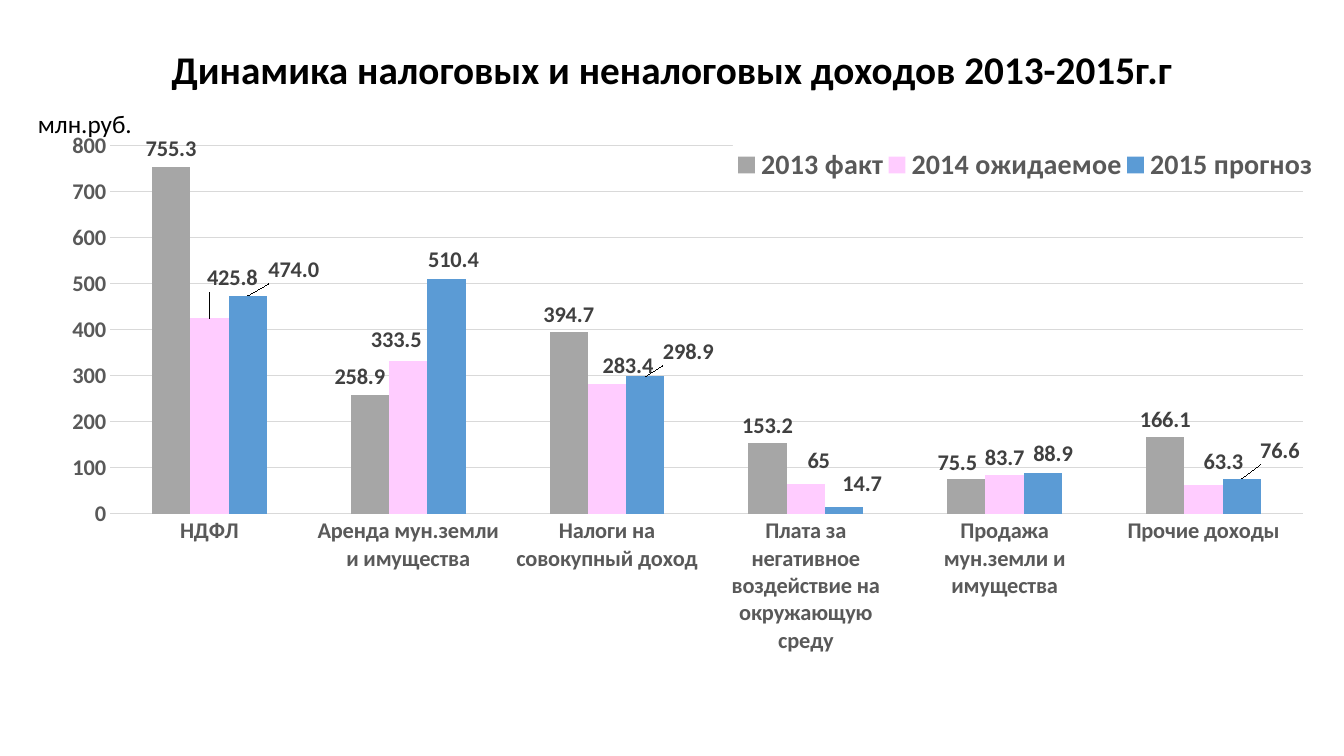
"""Build the slide on tax and non-tax revenue for 2013-2015."""
from dataclasses import dataclass, field

from lxml.etree import SubElement
from pptx import Presentation
from pptx.chart.data import CategoryChartData
from pptx.dml.color import RGBColor
from pptx.enum.chart import XL_CHART_TYPE as ChartType
from pptx.enum.chart import XL_LABEL_POSITION as LabelPos
from pptx.enum.chart import XL_LEGEND_POSITION as LegendPos
from pptx.enum.chart import XL_TICK_MARK as Tick
from pptx.enum.text import MSO_ANCHOR as Anchor
from pptx.enum.text import MSO_AUTO_SIZE as AutoSize
from pptx.enum.text import PP_ALIGN as Align
from pptx.oxml import parse_xml
from pptx.oxml.ns import nsdecls, qn
from pptx.util import Emu, Pt


@dataclass(frozen=True)
class Theme:
    font: str = "Calibri"
    text: str = "000000"
    axis: str = "595959"
    label: str = "404040"
    grid: str = "D9D9D9"
    paper: str = "FFFFFF"
    title_pt: int = 28
    legend_pt: int = 20
    unit_pt: int = 18
    chart_pt: int = 16
    line_pt: float = 0.75


@dataclass(frozen=True)
class Box:
    x: int
    y: int
    w: int
    h: int

    def emu(self) -> tuple:
        return tuple(px(v) for v in (self.x, self.y, self.w, self.h))


@dataclass(frozen=True)
class Series:
    name: str
    values: tuple
    color: str
    number_format: str = "General"
    label_shifts: dict = field(default_factory=dict)


THEME = Theme()
EMU_PER_PX = 12192000 / 1344
SLIDE_W, SLIDE_H = 1344, 756
TITLE = Box(92, 31, 1159, 81)
UNIT = Box(28, 103, 127, 40)
CHART = Box(46, 132, 1272, 593)
PLOT = Box(64, 14, 1193, 368)
LEGEND = Box(687, 12, 585, 42)

CATEGORIES = (
    "НДФЛ",
    "Аренда мун.земли и имущества",
    "Налоги на совокупный доход",
    "Плата за негативное воздействие на окружающую среду",
    "Продажа мун.земли и имущества",
    "Прочие доходы",
)
SERIES = (
    Series("2013 факт", (755.3, 258.9, 394.7, 153.2, 75.5, 166.1), "A6A6A6",
           label_shifts={1: (-10, 0), 4: (-9, 2)}),
    Series("2014 ожидаемое", (425.8, 333.5, 283.4, 65, 83.7, 63.3), "FFCCFF",
           label_shifts={0: (23, -22), 1: (-12, -3), 2: (21, 0),
                         3: (13, -5), 5: (20, -5)}),
    Series("2015 прогноз", (474, 510.4, 298.9, 14.7, 88.9, 76.6), "5B9BD5", "#,##0.0",
           label_shifts={0: (46, -8), 1: (7, -1), 2: (43, -7),
                         3: (18, -5), 4: (10, -1), 5: (38, -10)}),
)


def px(n: int) -> Emu:
    return Emu(round(n * EMU_PER_PX))


def rgb(color: str) -> RGBColor:
    return RGBColor.from_string(color)


def set_font(font, size: float, color: str, bold: bool) -> None:
    font.name, font.size, font.bold = THEME.font, Pt(size), bold
    font.color.rgb = rgb(color)


def set_line(line) -> None:
    line.color.rgb = rgb(THEME.grid)
    line.width = Pt(THEME.line_pt)


def place(parent, index: int, **parts) -> None:
    for old in parent.findall(qn("c:layout")):
        parent.remove(old)
    layout = parse_xml(f"<c:layout {nsdecls('c')}><c:manualLayout/></c:layout>")
    for name, value in parts.items():
        SubElement(layout[0], qn(f"c:{name}")).set("val", str(value))
    parent.insert(index, layout)


def edges(box: Box) -> dict:
    return dict(xMode="edge", yMode="edge",
                x=round(box.x / CHART.w, 4), y=round(box.y / CHART.h, 4),
                w=round(box.w / CHART.w, 4), h=round(box.h / CHART.h, 4))


def style_series(ser, data: Series) -> None:
    ser.format.fill.solid()
    ser.format.fill.fore_color.rgb = rgb(data.color)
    ser.invert_if_negative = False
    labels = ser.data_labels
    labels.show_value = True
    labels.position = LabelPos.OUTSIDE_END
    labels.number_format = data.number_format
    labels.number_format_is_linked = False
    set_font(labels.font, THEME.chart_pt, THEME.label, True)
    for i, (dx, dy) in data.label_shifts.items():
        label = ser.points[i].data_label
        label.position = LabelPos.OUTSIDE_END
        set_font(label.font, THEME.chart_pt, THEME.label, True)
    for node in labels._element.findall(qn("c:dLbl")):
        dx, dy = data.label_shifts[int(node.find(qn("c:idx")).get("val"))]
        place(node, 1, x=round(dx / CHART.w, 4), y=round(dy / CHART.h, 4))
        node.insert(2, parse_xml(
            f'<c:numFmt {nsdecls("c")} formatCode="{data.number_format}" sourceLinked="0"/>'))


def style_axes(chart) -> None:
    for axis in (chart.category_axis, chart.value_axis):
        axis.major_tick_mark = axis.minor_tick_mark = Tick.NONE
        set_font(axis.tick_labels.font, THEME.chart_pt, THEME.axis, True)
    set_line(chart.category_axis.format.line)
    values = chart.value_axis
    values.minimum_scale, values.maximum_scale, values.major_unit = 0, 800, 100
    values.format.line.fill.background()
    set_line(values.major_gridlines.format.line)


def style_legend(chart) -> None:
    chart.has_legend = True
    legend = chart.legend
    legend.position = LegendPos.BOTTOM
    legend.include_in_layout = False
    set_font(legend.font, THEME.legend_pt, THEME.axis, True)
    node = legend._element
    place(node, 1, **edges(LEGEND))
    node.find(qn("c:overlay")).addnext(parse_xml(
        f'<c:spPr {nsdecls("c", "a")}><a:solidFill><a:srgbClr val="{THEME.paper}"/>'
        "</a:solidFill></c:spPr>"))


def add_revenue_chart(s) -> None:
    data = CategoryChartData()
    data.categories = CATEGORIES
    for item in SERIES:
        data.add_series(item.name, item.values, item.number_format)
    chart = s.shapes.add_chart(ChartType.COLUMN_CLUSTERED, *CHART.emu(), data).chart
    chart.has_title = False
    set_font(chart.font, THEME.chart_pt, THEME.text, True)
    plot = chart.plots[0]
    plot.gap_width, plot.overlap, plot.vary_by_categories = 219, 0, False
    for ser, item in zip(plot.series, SERIES):
        style_series(ser, item)
    style_axes(chart)
    style_legend(chart)
    area = chart._chartSpace.find(f".//{qn('c:plotArea')}")
    place(area, 0, layoutTarget="inner", **edges(PLOT))


def add_title(s) -> None:
    sp = s.shapes.title
    sp.left, sp.top, sp.width, sp.height = TITLE.emu()
    tf = sp.text_frame
    tf.text = "Динамика налоговых и неналоговых доходов 2013-2015г.г"
    tf.vertical_anchor = Anchor.MIDDLE
    p = tf.paragraphs[0]
    p.alignment, p.line_spacing = Align.CENTER, 0.9
    set_font(p.font, THEME.title_pt, THEME.text, True)


def add_unit(s) -> None:
    tf = s.shapes.add_textbox(*UNIT.emu()).text_frame
    tf.word_wrap = True
    tf.auto_size = AutoSize.SHAPE_TO_FIT_TEXT
    tf.text = "млн.руб."
    set_font(tf.paragraphs[0].font, THEME.unit_pt, THEME.text, False)


def main() -> None:
    prs = Presentation()
    prs.slide_width, prs.slide_height = px(SLIDE_W), px(SLIDE_H)
    s = prs.slides.add_slide(prs.slide_layouts[5])
    add_title(s)
    add_revenue_chart(s)
    add_unit(s)
    prs.save("out.pptx")


if __name__ == "__main__":
    main()
